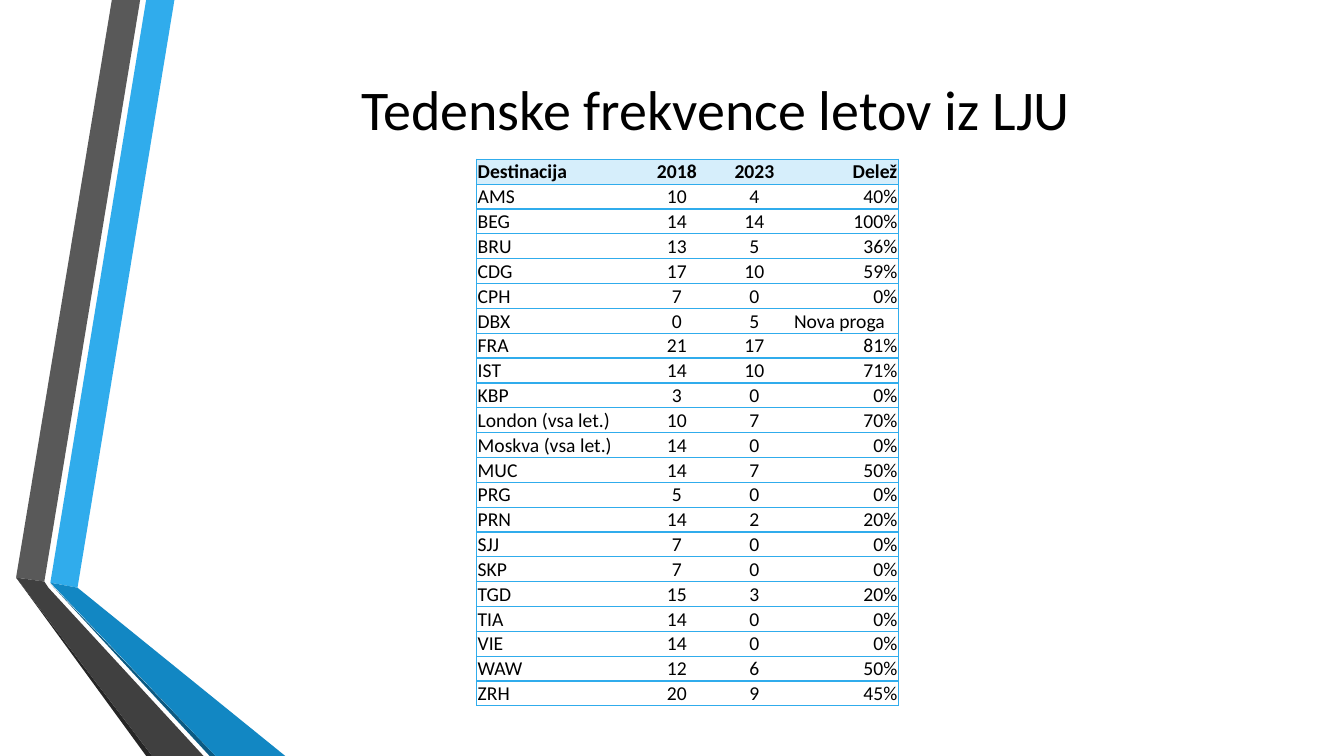
from lxml.etree import SubElement
from pptx import Presentation
from pptx.dml.color import RGBColor
from pptx.enum.text import MSO_ANCHOR, PP_ALIGN
from pptx.oxml.ns import qn
from pptx.util import Pt

BLACK = RGBColor(0x00, 0x00, 0x00)
WHITE = RGBColor(0xFF, 0xFF, 0xFF)
SKY = RGBColor(0x30, 0xAC, 0xEC)
PALE_SKY = RGBColor(0xD6, 0xEE, 0xFB)
BLUE = RGBColor(0x12, 0x87, 0xC3)
NAVY = RGBColor(0x0C, 0x5A, 0x82)
GREY = RGBColor(0x59, 0x59, 0x59)
DARK_GREY = RGBColor(0x40, 0x40, 0x40)
CHARCOAL = RGBColor(0x26, 0x26, 0x26)

RIBBONS = [
    (SKY, [(36, 416.2), (55.4, 419.8), (124.6, 0), (104.4, 0)]),
    (GREY, [(100.1, 0), (79.9, 0), (11.5, 412.6), (31.7, 415.4)]),
    (CHARCOAL, [(11.5, 412.6), (104.4, 540), (108.7, 540)]),
    (NAVY, [(36, 416.9), (149.8, 540), (154.1, 540)]),
    (BLUE, [(36, 416.2), (154.1, 540), (203.8, 540), (55.4, 419.8)]),
    (DARK_GREY, [(145.4, 540), (34.6, 419.8), (31.7, 415.4), (11.5, 412.6), (108.7, 540)]),
]

FLIGHTS = [
    ("Destinacija", "2018", "2023", "Delež"),
    ("AMS", "10", "4", "40%"),
    ("BEG", "14", "14", "100%"),
    ("BRU", "13", "5", "36%"),
    ("CDG", "17", "10", "59%"),
    ("CPH", "7", "0", "0%"),
    ("DBX", "0", "5", "Nova proga"),
    ("FRA", "21", "17", "81%"),
    ("IST", "14", "10", "71%"),
    ("KBP", "3", "0", "0%"),
    ("London (vsa let.)", "10", "7", "70%"),
    ("Moskva (vsa let.)", "14", "0", "0%"),
    ("MUC", "14", "7", "50%"),
    ("PRG", "5", "0", "0%"),
    ("PRN", "14", "2", "20%"),
    ("SJJ", "7", "0", "0%"),
    ("SKP", "7", "0", "0%"),
    ("TGD", "15", "3", "20%"),
    ("TIA", "14", "0", "0%"),
    ("VIE", "14", "0", "0%"),
    ("WAW", "12", "6", "50%"),
    ("ZRH", "20", "9", "45%"),
]
ALIGNMENTS = [PP_ALIGN.LEFT, PP_ALIGN.CENTER, PP_ALIGN.CENTER, PP_ALIGN.RIGHT]


def write(frame, text, size, align=PP_ALIGN.LEFT, bold=False, font="Calibri", color=BLACK):
    para = frame.paragraphs[0]
    para.alignment = align
    span = para.add_run()
    span.text = text
    span.font.name = font
    span.font.size = Pt(size)
    span.font.bold = bold
    span.font.color.rgb = color


def set_borders(cell, visible, color, width=1):
    """Draw the sides named in visible (letters L, R, T, B) and hide the others."""
    properties = cell._tc.get_or_add_tcPr()
    for position, side in enumerate("LRTB"):
        line = SubElement(properties, qn(f"a:ln{side}"), w=str(Pt(width)))
        if side in visible:
            fill = SubElement(line, qn("a:solidFill"))
            SubElement(fill, qn("a:srgbClr"), val=str(color))
        else:
            SubElement(line, qn("a:noFill"))
        properties.insert(position, line)


class SlideBuilder:
    def __init__(self, page, text_size=14, line_color=SKY):
        self.page = page
        self.text_size = text_size
        self.line_color = line_color

    def ribbon(self, color, points):
        corners = [(Pt(x), Pt(y)) for x, y in points]
        builder = self.page.shapes.build_freeform(*corners[0])
        builder.add_line_segments(corners[1:], close=True)
        shape = builder.convert_to_shape()
        shape.shadow.inherit = False
        shape.fill.solid()
        shape.fill.fore_color.rgb = color
        shape.line.fill.background()

    def title(self, text, left, top, width, height):
        box = self.page.shapes.title
        box.left, box.top, box.width, box.height = map(Pt, (left, top, width, height))
        box.text_frame.vertical_anchor = MSO_ANCHOR.MIDDLE
        box.text_frame.word_wrap = True
        write(box.text_frame, text, 40, align=PP_ALIGN.CENTER)

    def table(self, rows, left, top, column_widths, row_height):
        frame = self.page.shapes.add_table(
            len(rows), len(column_widths), Pt(left), Pt(top),
            Pt(sum(column_widths)), Pt(row_height * len(rows)))
        table = frame.table
        table.horz_banding = False
        table.first_row = False
        for column, width in zip(table.columns, column_widths):
            column.width = Pt(width)
        for row_index, values in enumerate(rows):
            table.rows[row_index].height = Pt(row_height)
            for column_index, value in enumerate(values):
                self.cell(table.cell(row_index, column_index), value,
                          row_index == 0, column_index, len(values))

    def cell(self, cell, value, is_header, column_index, column_count):
        cell.margin_left = cell.margin_right = cell.margin_top = Pt(0.6)
        cell.margin_bottom = 0
        cell.vertical_anchor = MSO_ANCHOR.BOTTOM
        cell.fill.solid()
        cell.fill.fore_color.rgb = PALE_SKY if is_header else WHITE
        align = PP_ALIGN.LEFT if value == "Nova proga" else ALIGNMENTS[column_index]
        write(cell.text_frame, value, self.text_size, align=align, bold=is_header)
        sides = "TB"
        if column_index == 0:
            sides += "L"
        if column_index == column_count - 1:
            sides += "R"
        set_borders(cell, sides, self.line_color)


def main():
    deck = Presentation()
    deck.slide_width, deck.slide_height = Pt(960), Pt(540)
    builder = SlideBuilder(deck.slides.add_slide(deck.slide_layouts[5]))
    for color, points in RIBBONS:
        builder.ribbon(color, points)
    builder.title("Tedenske frekvence letov iz LJU", 116.6, 7.9, 789.1, 138.2)
    builder.table(FLIGHTS, 340.6, 113.8, [115.2, 55.4, 55.4, 75], 17.77)
    deck.save("out.pptx")


if __name__ == "__main__":
    main()
